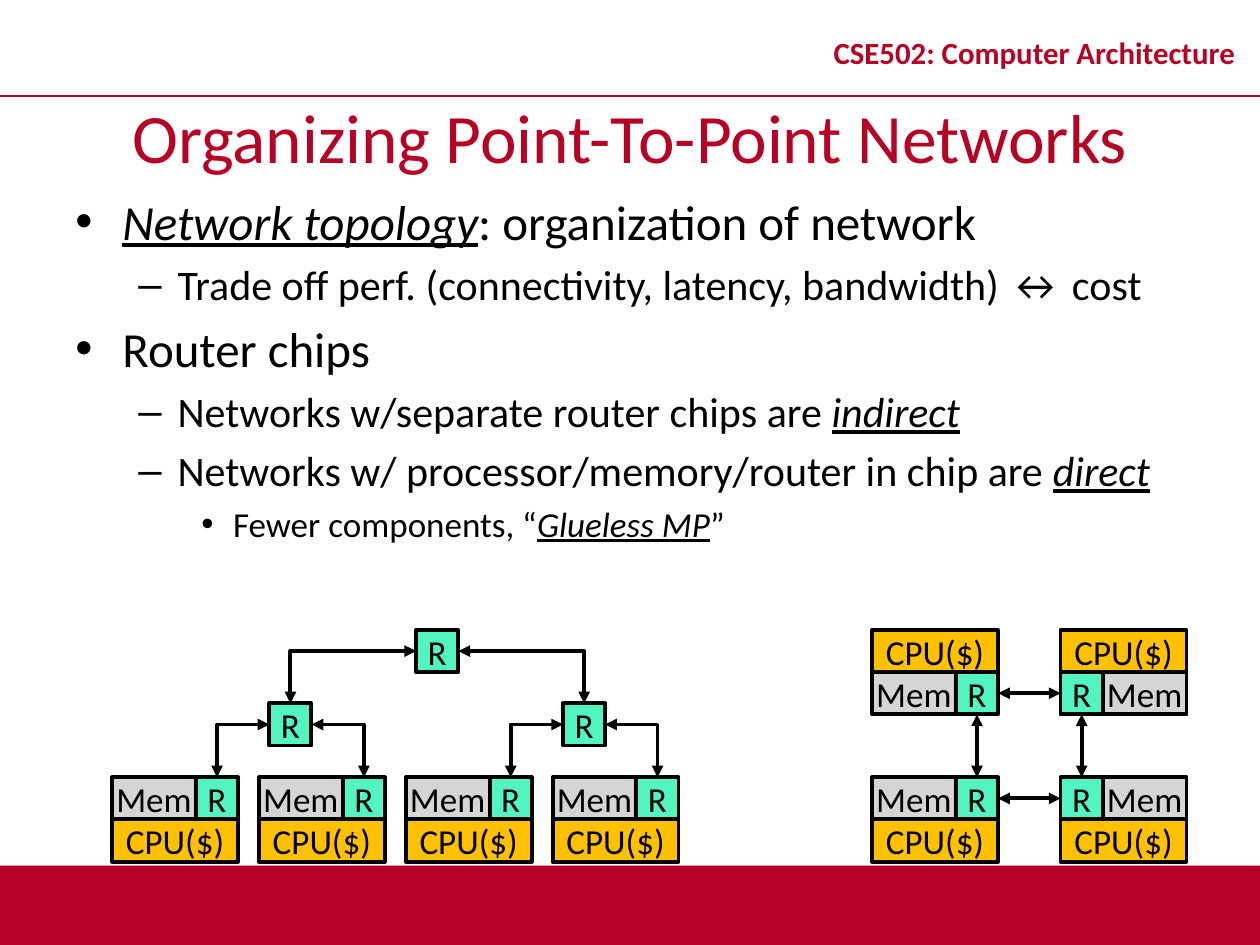
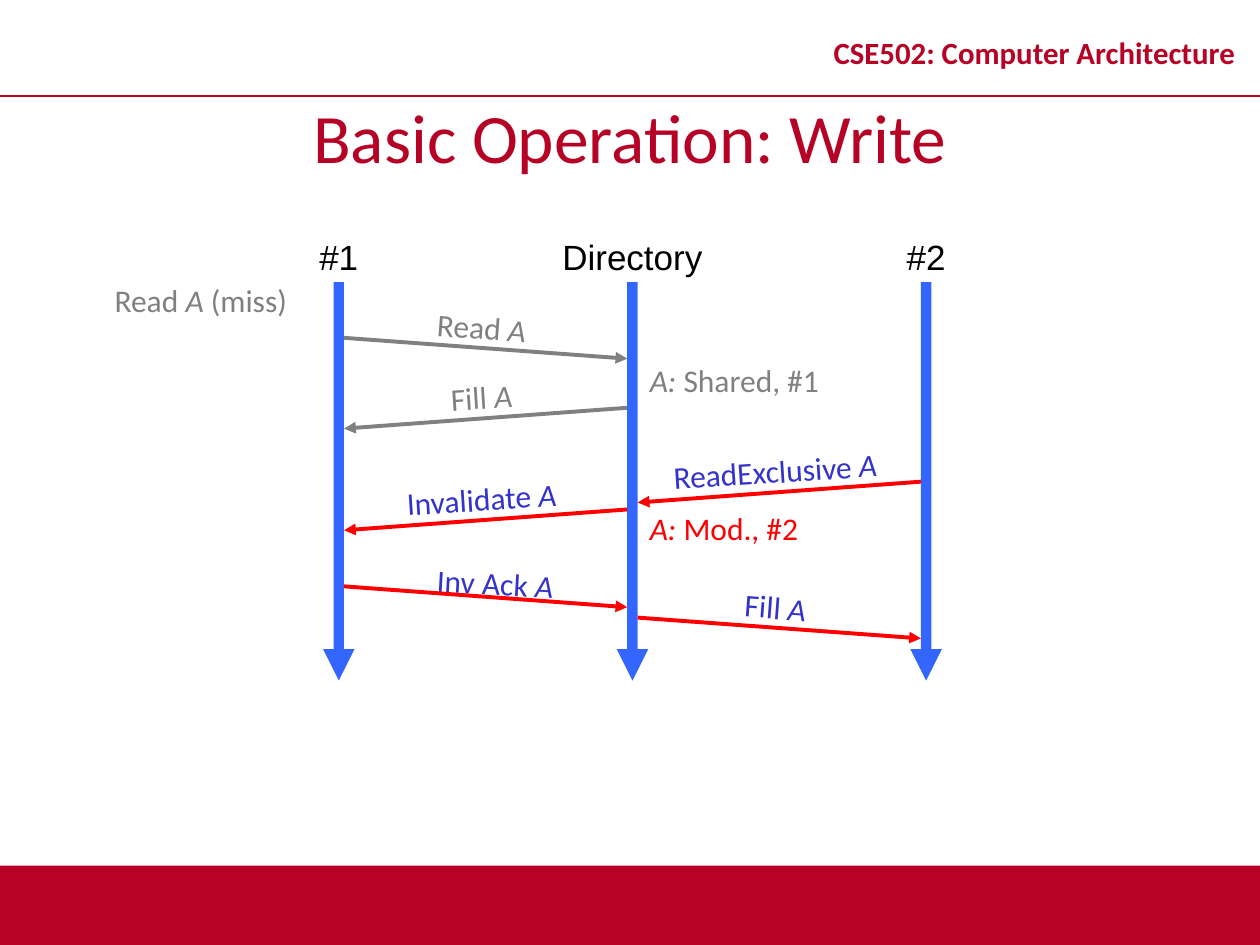
from dataclasses import dataclass
from typing import NamedTuple

from lxml import etree
from pptx import Presentation
from pptx import util as u
from pptx.dml.color import RGBColor
from pptx.enum import shapes, text
from pptx.oxml.ns import qn
from pptx.shapes.autoshape import Shape
from pptx.slide import Slide

CRIMSON = RGBColor(0xB6, 0x02, 0x25)
BLACK = RGBColor(0x00, 0x00, 0x00)
WHITE = RGBColor(0xFF, 0xFF, 0xFF)
GRAY = RGBColor(0x80, 0x80, 0x80)
RED = RGBColor(0xFF, 0x00, 0x00)
INDIGO = RGBColor(0x33, 0x33, 0xCC)
LANE_BLUE = RGBColor(0x33, 0x66, 0xFF)
CPU_GOLD = RGBColor(0xFF, 0xC0, 0x00)
MEMORY_GRAY = RGBColor(0xD5, 0xD5, 0xD5)
ROUTER_GREEN = RGBColor(0x52, 0xF4, 0xC2)

SLIDE_WIDTH, SLIDE_HEIGHT = 25.4, 19.05
HEADER_RULE_Y = 1.93
STROKE = 2.25

CELL = 0.85
MEMORY_WIDTH = 1.69
CPU_WIDTH = 2.54
NODE_PITCH = 2.96
TREE_LEFT = 2.26
TREE_LEVELS = (12.7, 14.18, 15.67)

LANE_NAMES = ("#1", "Directory", "#2")
LANE_X = [6.83 + 5.92 * index for index in range(3)]
LANE_WIDTH = 0.21
MESSAGE_DROP = 0.42


class Box(NamedTuple):
    left: float
    top: float
    width: float
    height: float


class Span(NamedTuple):
    text: str
    italic: bool = False
    underline: bool = False


class Style(NamedTuple):
    size: float
    color: RGBColor = BLACK
    font: str = "Calibri"
    bold: bool = False


class Level(NamedTuple):
    size: int
    margin: float
    hanging: float
    bullet: str


@dataclass
class Message:
    label: tuple[Span, ...]
    start: int
    end: int
    y: float
    label_width: float
    color: RGBColor = RED
    label_color: RGBColor = INDIGO
    label_shift: float = -0.08
    lift: float = 0.38
    tilt: float | None = None


LEVELS = (
    Level(28, 0.95, 0.95, "•"),
    Level(24, 2.06, 0.79, "–"),
    Level(20, 3.18, 0.64, "•"),
)


def term(words: str) -> Span:
    return Span(words, italic=True, underline=True)


BULLETS = (
    (0, (term("Network topology"), Span(": organization of network"))),
    (1, (Span("Trade off perf. (connectivity, latency, bandwidth) ↔ cost"),)),
    (0, (Span("Router chips"),)),
    (1, (Span("Networks w/separate router chips are "), term("indirect"))),
    (1, (Span("Networks w/ processor/memory/router in chip are "), term("direct"))),
    (2, (Span("Fewer components, “"), term("Glueless MP"), Span("”"))),
)

ADDRESS = Span("A", italic=True)
MESSAGES = (
    Message((Span("Read "), ADDRESS), 0, 1, 6.81, 2.34, GRAY, GRAY),
    Message((Span("Fill "), ADDRESS), 1, 0, 8.22, 1.75, GRAY, GRAY),
    Message((Span("ReadExclusive"), Span(" A", italic=True)), 2, 1, 9.71, 4.67),
    Message((Span("Invalidate "), ADDRESS), 1, 0, 10.27, 3.56),
    Message((Span("Inv Ack "), ADDRESS), 0, 1, 11.82, 4.78,
            label_shift=0.19, lift=0.23, tilt=3.2),
    Message((Span("Fill "), ADDRESS), 1, 2, 12.45, 1.75),
)

NOTES = (
    (Box(2.06, 5.54, 5.08, 1.02), GRAY, (Span("Read "), ADDRESS, Span(" (miss)"))),
    (Box(12.85, 7.16, 5.72, 1.02), GRAY, (Span("A:", italic=True), Span(" Shared, #1"))),
    (Box(12.85, 10.13, 5.72, 1.02), RED, (Span("A:", italic=True), Span(" Mod., #2"))),
)


def write(paragraph, spans: tuple[Span, ...], style: Style) -> None:
    for span in spans:
        run = paragraph.add_run()
        run.text = span.text
        run.font.size = u.Pt(style.size)
        run.font.name = style.font
        run.font.bold = style.bold
        run.font.italic = span.italic
        run.font.underline = span.underline
        run.font.color.rgb = style.color


def add_text(slide: Slide, box: Box, spans: tuple[Span, ...], style: Style,
             align=text.PP_ALIGN.LEFT, anchor=text.MSO_ANCHOR.TOP,
             wrap: bool = True, spacing: float = 1.0) -> Shape:
    shape = slide.shapes.add_textbox(*map(u.Cm, box))
    frame = shape.text_frame
    frame.word_wrap = wrap
    frame.vertical_anchor = anchor
    paragraph = frame.paragraphs[0]
    paragraph.alignment = align
    paragraph.line_spacing = spacing
    write(paragraph, spans, style)
    return shape


def add_block(slide: Slide, box: Box, fill: RGBColor) -> Shape:
    shape = slide.shapes.add_shape(shapes.MSO_SHAPE.RECTANGLE, *map(u.Cm, box))
    shape.shadow.inherit = False
    shape.fill.solid()
    shape.fill.fore_color.rgb = fill
    shape.line.fill.background()
    return shape


def style_line(shape, color: RGBColor, width: float, heads: tuple[str, ...] = ()) -> None:
    shape.line.color.rgb = color
    shape.line.width = u.Pt(width)
    outline = shape.element.spPr.find(qn("a:ln"))
    for head in heads:
        etree.SubElement(outline, qn(f"a:{head}"), type="triangle")


def add_line(slide: Slide, start: tuple[float, float], end: tuple[float, float],
             color: RGBColor, width: float, heads: tuple[str, ...] = ()):
    line = slide.shapes.add_connector(
        shapes.MSO_CONNECTOR.STRAIGHT, *map(u.Cm, (*start, *end)))
    style_line(line, color, width, heads)
    etree.SubElement(line.element.spPr, qn("a:effectLst"))
    return line


def add_link(slide: Slide, first: Shape, first_side: int,
             second: Shape, second_side: int) -> None:
    line = add_line(slide, (0, 0), (0, 0), BLACK, STROKE, ("headEnd", "tailEnd"))
    line.begin_connect(first, first_side)
    line.end_connect(second, second_side)


def add_elbow(slide: Slide, child: Shape, parent: Shape) -> None:
    child_x = child.left + child.width // 2
    parent_y = parent.top + parent.height // 2
    parent_x = parent.left if child.left < parent.left else parent.left + parent.width
    builder = slide.shapes.build_freeform(child_x, child.top)
    builder.add_line_segments([(child_x, parent_y), (parent_x, parent_y)], close=False)
    elbow = builder.convert_to_shape()
    elbow.shadow.inherit = False
    elbow.fill.background()
    style_line(elbow, BLACK, STROKE, ("headEnd", "tailEnd"))


def add_part(slide: Slide, name: str, left: float, top: float,
             width: float, fill: RGBColor) -> Shape:
    shape = add_block(slide, Box(left, top, width, CELL), fill)
    style_line(shape, BLACK, STROKE)
    frame = shape.text_frame
    frame.word_wrap = False
    frame.vertical_anchor = text.MSO_ANCHOR.MIDDLE
    frame.margin_left = frame.margin_right = frame.margin_top = frame.margin_bottom = 0
    frame.paragraphs[0].alignment = text.PP_ALIGN.CENTER
    write(frame.paragraphs[0], (Span(name),), Style(20))
    return shape


def add_router(slide: Slide, left: float, top: float) -> Shape:
    return add_part(slide, "R", left, top, CELL, ROUTER_GREEN)


def add_node(slide: Slide, left: float, router_top: float,
             router_first: bool = False, cpu_above: bool = False) -> Shape:
    cpu_top = router_top - CELL if cpu_above else router_top + CELL
    memory_left, router_left = (
        (left + CELL, left) if router_first else (left, left + MEMORY_WIDTH))
    add_part(slide, "CPU($)", left, cpu_top, CPU_WIDTH, CPU_GOLD)
    add_part(slide, "Mem", memory_left, router_top, MEMORY_WIDTH, MEMORY_GRAY)
    return add_router(slide, router_left, router_top)


def add_frame(presentation, title: str) -> Slide:
    slide = presentation.slides.add_slide(presentation.slide_layouts[6])
    add_block(slide, Box(0, 17.45, SLIDE_WIDTH, 1.6), CRIMSON)
    add_line(slide, (0, HEADER_RULE_Y), (SLIDE_WIDTH, HEADER_RULE_Y), CRIMSON, 1)
    centre, middle = text.PP_ALIGN.CENTER, text.MSO_ANCHOR.MIDDLE
    add_text(slide, Box(16.31, 0.33, 9.09, 1.6), (Span("CSE502: Computer Architecture"),),
             Style(17.6, CRIMSON, bold=True), centre, middle, spacing=0.8)
    add_text(slide, Box(0, HEADER_RULE_Y, SLIDE_WIDTH, 1.6), (Span(title),),
             Style(39.6, CRIMSON), centre, middle)
    return slide


def add_bullets(slide: Slide) -> None:
    frame = slide.shapes.add_textbox(*map(u.Cm, (1.27, 3.73, 22.86, 13.59))).text_frame
    frame.word_wrap = True
    for index, (depth, spans) in enumerate(BULLETS):
        level = LEVELS[depth]
        paragraph = frame.add_paragraph() if index else frame.paragraphs[0]
        paragraph.level = depth
        if index:
            paragraph.space_before = u.Pt(level.size * 0.2)
        properties = paragraph._p.get_or_add_pPr()
        properties.set("marL", str(u.Cm(level.margin)))
        properties.set("indent", str(-u.Cm(level.hanging)))
        etree.SubElement(properties, qn("a:buFont"), typeface="Arial")
        etree.SubElement(properties, qn("a:buChar"), char=level.bullet)
        write(paragraph, spans, Style(level.size))


def add_tree(slide: Slide) -> None:
    root_y, branch_y, leaf_y = TREE_LEVELS
    lefts = [TREE_LEFT + NODE_PITCH * index for index in range(4)]
    leaves = [add_node(slide, left, leaf_y) for left in lefts]
    first_branch = TREE_LEFT + MEMORY_WIDTH + NODE_PITCH / 2
    root = add_router(slide, first_branch + NODE_PITCH, root_y)
    for index in range(2):
        branch = add_router(slide, first_branch + 2 * NODE_PITCH * index, branch_y)
        for leaf in leaves[2 * index:2 * index + 2]:
            add_elbow(slide, leaf, branch)
        add_elbow(slide, branch, root)


def add_mesh(slide: Slide) -> None:
    rows = [
        [add_node(slide, left, top, router_first, cpu_above)
         for left, router_first in ((17.58, False), (21.38, True))]
        for top, cpu_above in ((13.55, True), (15.67, False))
    ]
    for left_router, right_router in rows:
        add_link(slide, left_router, 3, right_router, 1)
    for upper_router, lower_router in zip(*rows):
        add_link(slide, upper_router, 2, lower_router, 0)


def add_message(slide: Slide, message: Message) -> None:
    direction = 1 if message.end > message.start else -1
    start_x = LANE_X[message.start] + direction * LANE_WIDTH / 2
    end_x = LANE_X[message.end] - direction * LANE_WIDTH / 2
    centre_x = (start_x + end_x) / 2 + message.label_shift
    centre_y = message.y + MESSAGE_DROP / 2 - message.lift
    height = 0.94
    label = add_text(
        slide, Box(centre_x - message.label_width / 2, centre_y - height / 2,
                   message.label_width, height),
        message.label, Style(18, message.label_color), text.PP_ALIGN.CENTER,
        wrap=False, spacing=0.9)
    label.rotation = message.tilt or (4.3 if direction > 0 else -3.7)
    add_line(slide, (start_x, message.y), (end_x, message.y + MESSAGE_DROP),
             message.color, STROKE, ("tailEnd",))


def add_lane(slide: Slide, name: str, x: float) -> None:
    add_line(slide, (x, 13.08), (x, 13.72), LANE_BLUE, 6, ("tailEnd",))
    add_block(slide, Box(x - LANE_WIDTH / 2, 5.69, LANE_WIDTH, 7.62), LANE_BLUE)
    add_text(slide, Box(x - 2.22, 4.62, 4.44, 1.09), (Span(name),),
             Style(20, font="Arial"), text.PP_ALIGN.CENTER)


def main() -> None:
    presentation = Presentation()
    presentation.slide_width = u.Cm(SLIDE_WIDTH)
    presentation.slide_height = u.Cm(SLIDE_HEIGHT)

    networks = add_frame(presentation, "Organizing Point-To-Point Networks")
    add_bullets(networks)
    add_tree(networks)
    add_mesh(networks)

    write_operation = add_frame(presentation, "Basic Operation: Write")
    for name, x in zip(LANE_NAMES, LANE_X):
        add_lane(write_operation, name, x)
    for message in MESSAGES:
        add_message(write_operation, message)
    for box, color, spans in NOTES:
        add_text(write_operation, box, spans, Style(18, color))

    presentation.save("out.pptx")


if __name__ == "__main__":
    main()
